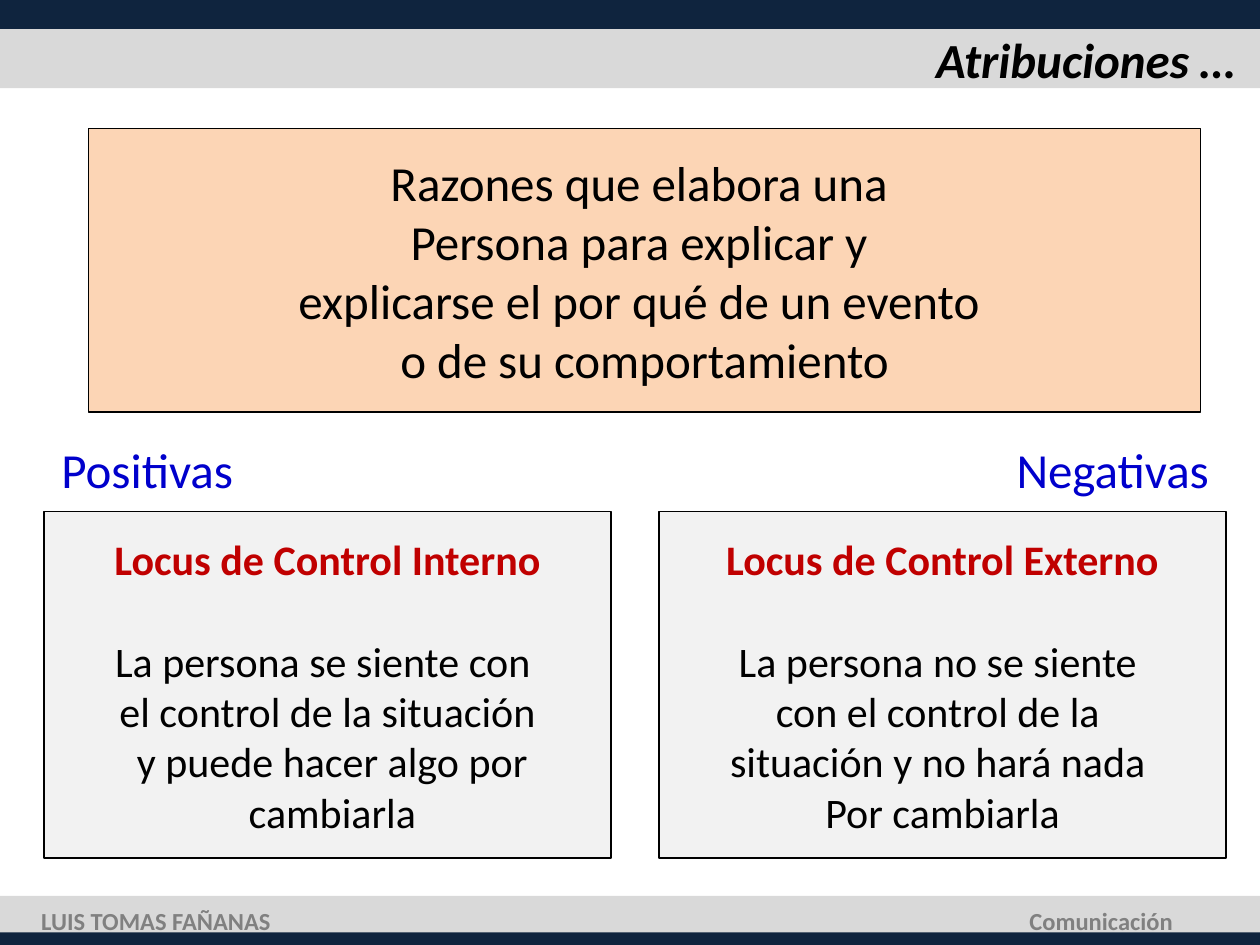
from dataclasses import dataclass

from pptx import Presentation
from pptx.dml.color import RGBColor
from pptx.enum.shapes import MSO_SHAPE
from pptx.enum.text import MSO_ANCHOR, PP_ALIGN
from pptx.util import Pt

RECT = MSO_SHAPE.RECTANGLE
TOP, MIDDLE = MSO_ANCHOR.TOP, MSO_ANCHOR.MIDDLE
LEFT, CENTER, RIGHT = PP_ALIGN.LEFT, PP_ALIGN.CENTER, PP_ALIGN.RIGHT


@dataclass(frozen=True)
class Theme:
    font: str = "Calibri"
    navy: str = "0F243E"
    band: str = "D9D9D9"
    peach: str = "FCD5B5"
    panel: str = "F2F2F2"
    ink: str = "000000"
    red: str = "C00000"
    blue: str = "0000CC"
    gray: str = "808080"
    large: int = 28
    body: int = 24
    small: int = 14


THEME = Theme()
WIDTH, HEIGHT = 720, 540

TITLE = "Atribuciones …"
REASONS = [
    "Razones que elabora una ",
    "Persona para explicar y ",
    "explicarse el por qué de un evento ",
    "o de su comportamiento",
]
CARDS = [
    {
        "label": "Positivas",
        "span": (28, 114),
        "head": "Locus de Control Interno",
        "lines": [
            "La persona se siente con ",
            " el control de la situación ",
            " y puede hacer algo por",
            " cambiarla",
        ],
    },
    {
        "label": "Negativas",
        "span": (573.8, 126),
        "head": "Locus de Control Externo",
        "lines": [
            "La persona no se siente ",
            "con el control de la ",
            "situación y no hará nada ",
            "Por cambiarla",
        ],
    },
]
FOOTER = [
    ("LUIS TOMAS FAÑANAS", 16.5, 147, LEFT),
    ("Comunicación", 577.4, 100, RIGHT),
]
BANDS = [
    (0, 50.4, THEME.band),
    (0, 16.6, THEME.navy),
    (512, 24.5, THEME.band),
    (532.8, 7.2, THEME.navy),
]
CARD_LEFT, CARD_TOP, CARD_WIDTH, CARD_HEIGHT = 25.2, 292.4, 324, 198
CARD_STEP = 351.4
HEAD_GAP = 29.3


def add_box(slide, place, fill, line=None):
    box = slide.shapes.add_shape(RECT, *map(Pt, place))
    box.shadow.inherit = False
    box.fill.solid()
    box.fill.fore_color.rgb = RGBColor.from_string(fill)
    if line:
        box.line.color.rgb = RGBColor.from_string(line)
        box.line.width = Pt(0.75)
    else:
        box.line.fill.background()
    return box


def add_line(frame, text, size, color, align, bold=False, slant=False, gap=0):
    first = frame.paragraphs[0]
    para = frame.add_paragraph() if first.runs else first
    para.alignment = align
    if gap:
        para.space_before = Pt(gap)
    run = para.add_run()
    run.text = text
    font = run.font
    font.name, font.size = THEME.font, Pt(size)
    font.bold, font.italic = bold, slant
    font.color.rgb = RGBColor.from_string(color)


def set_frame(shape, anchor, wrap=False):
    frame = shape.text_frame
    frame.word_wrap = wrap
    frame.vertical_anchor = anchor
    return frame


def add_text(slide, place, anchor, wrap=False):
    return set_frame(slide.shapes.add_textbox(*map(Pt, place)), anchor, wrap)


def main():
    deck = Presentation()
    deck.slide_width, deck.slide_height = Pt(WIDTH), Pt(HEIGHT)
    slide = deck.slides.add_slide(deck.slide_layouts[6])

    for top, height, color in BANDS:
        add_box(slide, (0, top, WIDTH, height), color)

    frame = add_text(slide, (134.6, 16.6, 578.2, 34.5), MIDDLE, True)
    add_line(frame, TITLE, THEME.large, THEME.ink, RIGHT, True, True)

    box = add_box(slide, (50.4, 73.4, 635.8, 162), THEME.peach, THEME.ink)
    frame = set_frame(box, MIDDLE)
    for text in REASONS:
        add_line(frame, text, THEME.large, THEME.ink, CENTER)

    for index, card in enumerate(CARDS):
        left, width = card["span"]
        frame = add_text(slide, (left, 247.7, width, 41), TOP)
        add_line(frame, card["label"], THEME.large, THEME.blue, LEFT)

        place = (CARD_LEFT + index * CARD_STEP, CARD_TOP, CARD_WIDTH, CARD_HEIGHT)
        frame = set_frame(add_box(slide, place, THEME.panel, THEME.ink), MIDDLE)
        add_line(frame, card["head"], THEME.body, THEME.red, CENTER, True)
        for row, text in enumerate(card["lines"]):
            gap = 0 if row else HEAD_GAP
            add_line(frame, text, THEME.body, THEME.ink, CENTER, gap=gap)

    for text, left, width, align in FOOTER:
        frame = add_text(slide, (left, 514, width, 24.5), MIDDLE)
        add_line(frame, text, THEME.small, THEME.gray, align, True)

    deck.save("out.pptx")


if __name__ == "__main__":
    main()
